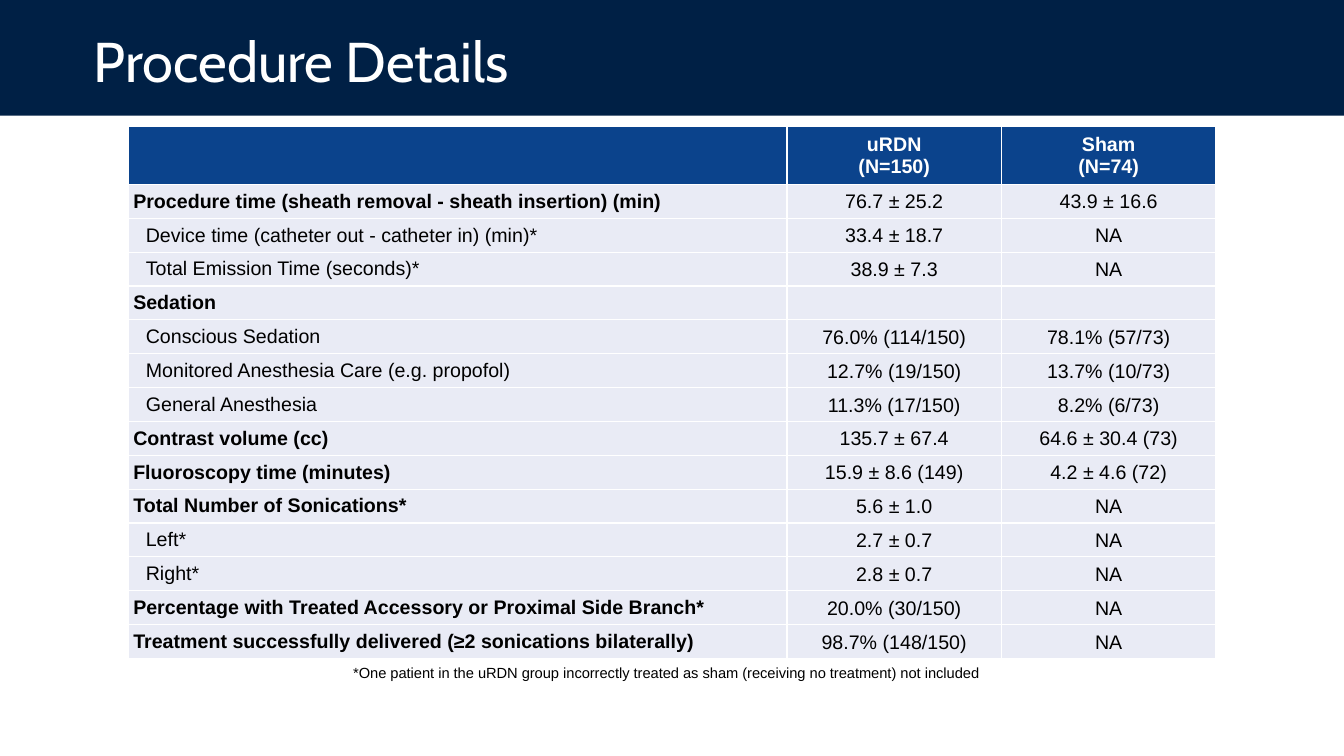
import pptx
import pptx.dml.color
import pptx.enum.shapes
import pptx.enum.text
import pptx.oxml
import pptx.oxml.ns
import pptx.util

Pt = pptx.util.Pt
ALIGN = pptx.enum.text.PP_ALIGN
MIDDLE = pptx.enum.text.MSO_ANCHOR.MIDDLE
COLORS = {"navy": "002045", "blue": "0B438C", "pale": "E9EBF5", "white": "FFFFFF", "black": "000000"}
COLUMN_WIDTHS = (470.6, 153.2, 153.2)
HEADER_HEIGHT, ROW_HEIGHT = 41.3, 24.2
HEADINGS = ("", "uRDN\n(N=150)", "Sham\n(N=74)")
MAIN, SUB = 0, 9
DETAILS = (
    (MAIN, "Procedure time (sheath removal - sheath insertion) (min)", "76.7 ± 25.2", "43.9 ± 16.6"),
    (SUB, "Device time (catheter out - catheter in) (min)*", "33.4 ± 18.7", "NA"),
    (SUB, "Total Emission Time (seconds)*", "38.9 ± 7.3", "NA"),
    (MAIN, "Sedation", "", ""),
    (SUB, "Conscious Sedation", "76.0% (114/150)", "78.1% (57/73)"),
    (SUB, "Monitored Anesthesia Care (e.g. propofol)", "12.7% (19/150)", "13.7% (10/73)"),
    (SUB, "General Anesthesia", "11.3% (17/150)", "8.2% (6/73)"),
    (MAIN, "Contrast volume (cc)", "135.7 ± 67.4", "64.6 ± 30.4 (73)"),
    (MAIN, "Fluoroscopy time (minutes)", "15.9 ± 8.6 (149)", "4.2 ± 4.6 (72)"),
    (MAIN, "Total Number of Sonications*", "5.6 ± 1.0", "NA"),
    (SUB, "Left*", "2.7 ± 0.7", "NA"),
    (SUB, "Right*", "2.8 ± 0.7", "NA"),
    (MAIN, "Percentage with Treated Accessory or Proximal Side Branch*", "20.0% (30/150)", "NA"),
    (MAIN, "Treatment successfully delivered (≥2 sonications bilaterally)", "98.7% (148/150)", "NA"),
)


def rgb(name):
    """Return the named colour."""
    return pptx.dml.color.RGBColor.from_string(COLORS[name])


def write(paragraph, text, size, color, font="Arial", bold=False):
    """Fill a paragraph with text in one style."""
    paragraph.text = text
    paragraph.font.name = font
    paragraph.font.size = Pt(size)
    paragraph.font.bold = bold
    paragraph.font.color.rgb = rgb(color)


def add_title_band(slide, left, top, width, height):
    """Draw the dark band and the title on it."""
    band = slide.shapes.add_shape(
        pptx.enum.shapes.MSO_SHAPE.RECTANGLE, Pt(left), Pt(top), Pt(width), Pt(height))
    band.shadow.inherit = False
    band.fill.solid()
    band.fill.fore_color.rgb = rgb("navy")
    band.line.fill.background()
    title = slide.shapes.add_textbox(Pt(left + 60), Pt(top + 9), Pt(width - 132), Pt(height - 8.6))
    title.text_frame.word_wrap = True
    title.text_frame.vertical_anchor = MIDDLE
    paragraph = title.text_frame.paragraphs[0]
    write(paragraph, "Procedure Details", 40, "white", "Cabin")
    paragraph.line_spacing = 0.9


def fill_cell(cell, text, fill, color, bold, align, indent=0):
    """Style one cell with white borders and write its text."""
    properties = cell._tc.get_or_add_tcPr()
    for side in ("lnL", "lnR", "lnT", "lnB"):
        properties.append(pptx.oxml.parse_xml(
            f'<a:{side} {pptx.oxml.ns.nsdecls("a")} w="12700"><a:solidFill>'
            f'<a:srgbClr val="{COLORS["white"]}"/></a:solidFill></a:{side}>'))
    cell.fill.solid()
    cell.fill.fore_color.rgb = rgb(fill)
    cell.vertical_anchor = MIDDLE
    cell.margin_top = cell.margin_bottom = Pt(2.8)
    cell.margin_right = Pt(3.6)
    cell.margin_left = Pt(3.6 + indent)
    paragraph = cell.text_frame.paragraphs[0]
    write(paragraph, text, 14, color, bold=bold)
    paragraph.alignment = align
    if not text:
        paragraph._p.get_or_add_endParaRPr().set("sz", "1400")


def add_details_table(slide, left, top):
    """Build the table of procedure details."""
    height = HEADER_HEIGHT + ROW_HEIGHT * len(DETAILS)
    table = slide.shapes.add_table(
        len(DETAILS) + 1, len(COLUMN_WIDTHS), Pt(left), Pt(top), Pt(sum(COLUMN_WIDTHS)), Pt(height)).table
    table.horz_banding = False
    for column, width in zip(table.columns, COLUMN_WIDTHS):
        column.width = Pt(width)
    for index, row in enumerate(table.rows):
        row.height = Pt(ROW_HEIGHT if index else HEADER_HEIGHT)
    for index, heading in enumerate(HEADINGS):
        fill_cell(table.cell(0, index), heading, "blue", "white", True, ALIGN.CENTER)
    for index, (indent, label, *values) in enumerate(DETAILS, 1):
        fill_cell(table.cell(index, 0), label, "pale", "black", indent == MAIN, ALIGN.LEFT, indent)
        for column, value in enumerate(values, 1):
            cell = table.cell(index, column)
            fill_cell(cell, value, "pale", "black", False, ALIGN.CENTER)
            if value:
                cell.text_frame.paragraphs[0].line_spacing = 1.07


def add_footnote(slide, left, top, width, height):
    """Write the note below the table."""
    note = slide.shapes.add_textbox(Pt(left), Pt(top), Pt(width), Pt(height))
    note.text_frame.word_wrap = True
    write(note.text_frame.paragraphs[0],
          "*One patient in the uRDN group incorrectly treated as sham (receiving no treatment) not included",
          10.5, "black")


def main():
    """Build and save the slide."""
    deck = pptx.Presentation()
    deck.slide_width, deck.slide_height = Pt(960), Pt(540)
    slide = deck.slides.add_slide(deck.slide_layouts[6])
    add_title_band(slide, 0, 0, 960, 82.6)
    add_details_table(slide, 91.6, 90.5)
    add_footnote(slide, 245.2, 470.7, 469.6, 20)
    deck.save("out.pptx")


if __name__ == "__main__":
    main()
